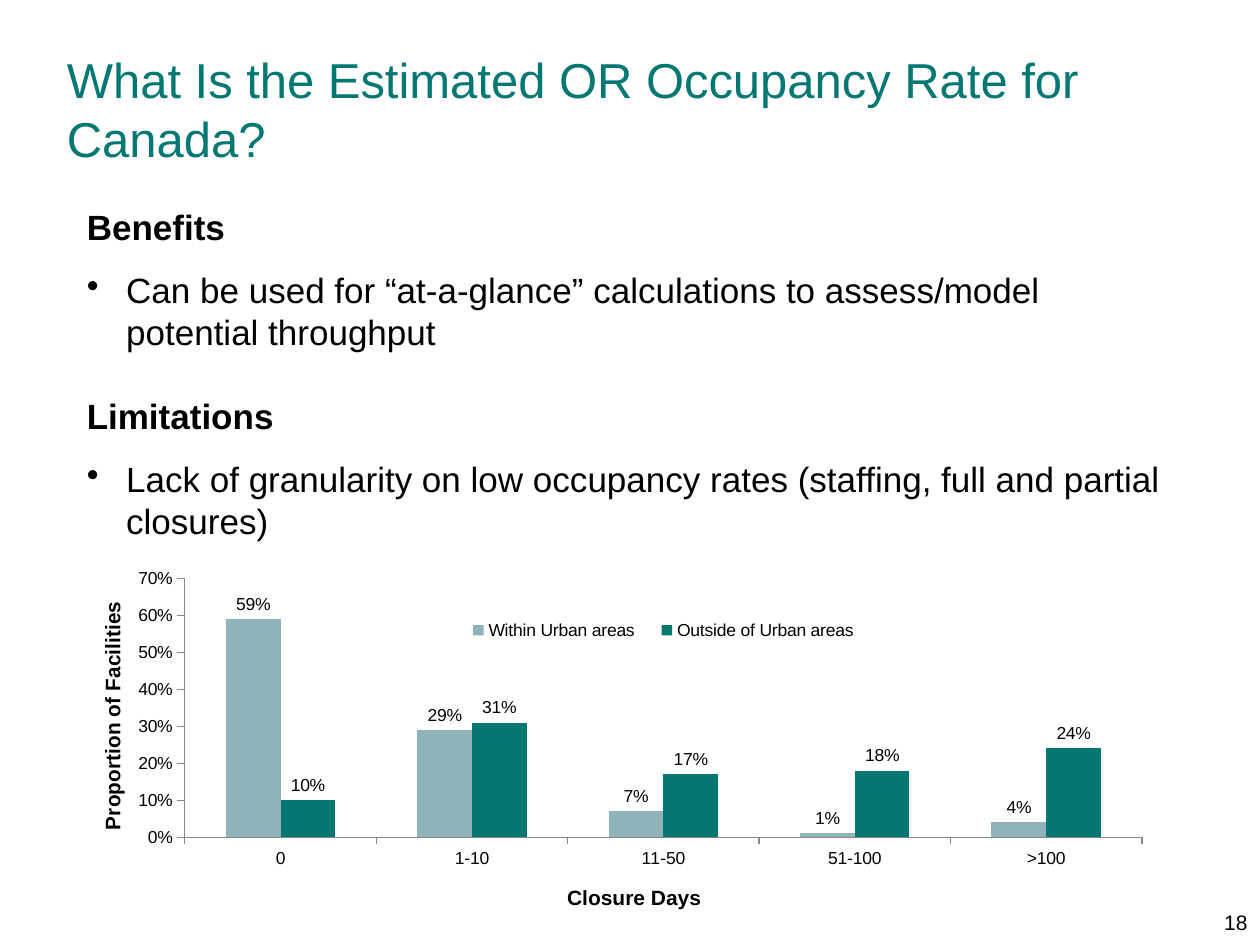
from pptx import Presentation
from pptx.chart.data import CategoryChartData
from pptx.dml.color import RGBColor
from pptx.enum.chart import XL_CHART_TYPE, XL_LABEL_POSITION, XL_LEGEND_POSITION, XL_TICK_MARK
from pptx.enum.text import MSO_ANCHOR, PP_ALIGN
from pptx.oxml import parse_xml
from pptx.oxml.ns import nsdecls, qn
from pptx.oxml.xmlchemy import OxmlElement
from pptx.util import Pt

FONT = "Arial"
BLACK = RGBColor(0x00, 0x00, 0x00)
TEAL = RGBColor(0x03, 0x78, 0x72)
MIST = RGBColor(0x8F, 0xB3, 0xB9)
GREY = RGBColor(0x86, 0x86, 0x86)

DAYS = ["0", "1-10", "11-50", "51-100", ">100"]
RATES = [
    ("Within Urban areas", [0.59, 0.29, 0.07, 0.01, 0.04], MIST),
    ("Outside of Urban areas", [0.10, 0.31, 0.17, 0.18, 0.24], TEAL),
]
POINTS = [
    ("Benefits", "Can be used for “at-a-glance” calculations to assess/model potential throughput"),
    ("Limitations", "Lack of granularity on low occupancy rates (staffing, full and partial closures)"),
]


def style(font, size, color=BLACK, bold=False):
    font.name, font.size, font.bold = FONT, Pt(size), bold
    font.color.rgb = color


def add_title(slide, text):
    title = slide.shapes.title
    title.left, title.top, title.width, title.height = Pt(31), Pt(26), Pt(629), Pt(72)
    frame = title.text_frame
    frame.text = text
    frame.vertical_anchor = MSO_ANCHOR.MIDDLE
    para = frame.paragraphs[0]
    para.alignment = PP_ALIGN.LEFT
    style(para.runs[0].font, 28, TEAL)


def add_box(slide, left, top, width, height):
    frame = slide.shapes.add_textbox(Pt(left), Pt(top), Pt(width), Pt(height)).text_frame
    frame.word_wrap = True
    return frame


def add_bullet(para):
    props = para._p.get_or_add_pPr()
    props.set("marL", str(Pt(22.5)))
    props.set("indent", str(Pt(-22.5)))
    mark = OxmlElement("a:buChar")
    mark.set("char", "•")
    props.append(mark)


def add_points(slide):
    frame = add_box(slide, 42.5, 114, 635, 237)
    for i, (head, note) in enumerate(POINTS):
        para = frame.add_paragraph() if i else frame.paragraphs[0]
        para.text = head
        if i:
            para.space_before = Pt(24)
        style(para.runs[0].font, 20, bold=True)
        para = frame.add_paragraph()
        para.text = note
        para.space_before = Pt(12)
        add_bullet(para)
        style(para.runs[0].font, 20)


def place(part, index, inner=False, **spots):
    """Give a chart part a manual layout, in fractions of the chart."""
    for old in part.findall(qn("c:layout")):
        part.remove(old)
    target = '<c:layoutTarget val="inner"/>' if inner else ""
    modes = "".join(f'<c:{k}Mode val="edge"/>' for k in "xy")
    sizes = "".join(f'<c:{k} val="{v}"/>' for k, v in spots.items())
    part.insert(index, parse_xml(
        f"<c:layout {nsdecls('c')}><c:manualLayout>{target}{modes}{sizes}"
        "</c:manualLayout></c:layout>"))


def format_axis(axis, text, x, y):
    axis.has_major_gridlines = False
    axis.major_tick_mark = XL_TICK_MARK.OUTSIDE
    axis.minor_tick_mark = XL_TICK_MARK.NONE
    axis.format.line.color.rgb = GREY
    axis.format.line.width = Pt(0.75)
    style(axis.tick_labels.font, 10)
    title = axis.axis_title
    title.text_frame.text = text
    style(title.text_frame.paragraphs[0].runs[0].font, 12, bold=True)
    place(title._element, 1, x=x, y=y)


def add_rates(slide):
    data = CategoryChartData(number_format="0%")
    data.categories = DAYS
    for name, values, _ in RATES:
        data.add_series(name, values)
    chart = slide.shapes.add_chart(
        XL_CHART_TYPE.COLUMN_CLUSTERED, Pt(42), Pt(309.5), Pt(636), Pt(214), data).chart
    chart.has_title = False
    style(chart.font, 10)

    # Axes
    format_axis(chart.category_axis, "Closure Days", 0.44, 0.92)
    format_axis(chart.value_axis, "Proportion of Facilities", 0.02, 0.16)
    scale = chart.value_axis
    scale.minimum_scale, scale.maximum_scale, scale.major_unit = 0, 0.7, 0.1
    scale.tick_labels.number_format = "0%"
    scale.tick_labels.number_format_is_linked = False

    # Columns and labels
    plot = chart.plots[0]
    plot.gap_width, plot.overlap, plot.vary_by_categories = 150, 0, False
    for series, (_, _, color) in zip(plot.series, RATES):
        series.format.fill.solid()
        series.format.fill.fore_color.rgb = color
        labels = series.data_labels
        labels.show_value = True
        labels.number_format = "0%"
        labels.number_format_is_linked = False
        labels.position = XL_LABEL_POSITION.OUTSIDE_END
        style(labels.font, 10)

    # Legend and plot area
    chart.has_legend = True
    legend = chart.legend
    legend.position = XL_LEGEND_POSITION.RIGHT
    legend.include_in_layout = False
    style(legend.font, 10)
    place(legend._element, 1, x=0.34, y=0.19, w=0.38, h=0.1)
    area = chart._chartSpace.find(qn("c:chart")).find(qn("c:plotArea"))
    place(area, 0, inner=True, x=0.1, y=0.1, w=0.86, h=0.7)


def add_number(slide, text):
    frame = add_box(slide, 642, 516, 78, 24)
    frame.text = text
    para = frame.paragraphs[0]
    para.alignment = PP_ALIGN.RIGHT
    style(para.runs[0].font, 12)


def main():
    deck = Presentation()
    deck.slide_width, deck.slide_height = Pt(720), Pt(540)
    slide = deck.slides.add_slide(deck.slide_layouts[5])
    add_title(slide, "What Is the Estimated OR Occupancy Rate for Canada?")
    add_points(slide)
    add_rates(slide)
    add_number(slide, "18")
    deck.save("out.pptx")


if __name__ == "__main__":
    main()
